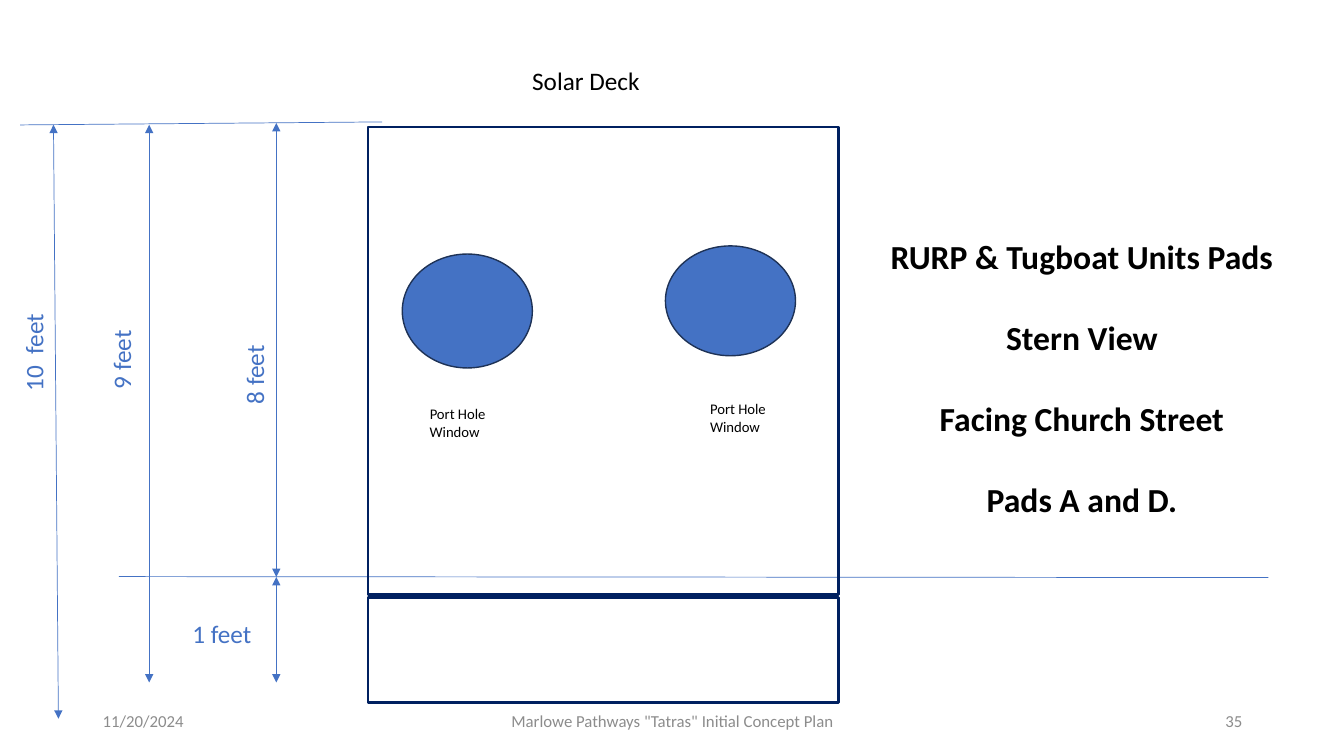
from lxml.etree import SubElement
from pptx import Presentation
from pptx.dml.color import RGBColor
from pptx.enum.shapes import MSO_CONNECTOR, MSO_SHAPE
from pptx.enum.text import MSO_ANCHOR, PP_ALIGN
from pptx.oxml.ns import qn
from pptx.util import Inches, Pt

WIDTH, HEIGHT = Inches(13.33), Inches(7.5)
BLUE, NAVY, EDGE, BLACK, GREY = "4472C4", "002060", "1E3256", "000000", "8C8C8C"
LEFT, CENTER, RIGHT = PP_ALIGN.LEFT, PP_ALIGN.CENTER, PP_ALIGN.RIGHT

ROOF, GROUND, BASE = 16.5, 76.33, 90.27
LABEL = (11.55, 5.33)
HULL_LEFT, HULL_WIDTH = 27.38, 35.03

GUIDES = [(8.85, 76.27, 94.37, 76.4), (1.5, 16.53, 28.43, 16.13)]
DIMENSIONS = [
    (20.56, GROUND, 20.56, 16.27),
    (11.1, BASE, 11.1, ROOF),
    (20.56, BASE, 20.56, GROUND),
    (4.35, 95.07, 3.98, ROOF),
]
HULL_PARTS = [(16.8, 61.87), (79.07, 13.87)]
PORT_HOLES = [(29.93, 33.6, 9.68, 15.07), (49.51, 32.53, 9.68, 14.53)]

LABEL_STYLE = {"size": Pt(18), "color": BLUE}
TITLE_STYLE = {"size": Pt(24), "color": BLACK, "bold": True}
CAPTION_STYLE = {"size": Pt(10.5), "color": BLACK}
FOOTER_STYLE = {"size": Pt(12), "color": GREY}

DIMENSION_LABELS = [
    ("8 feet", 13.13, 41.87, 270),
    ("9 feet", 3.23, 39.87, 270),
    ("10  feet", -3.3, 40.13, 270),
    ("1 feet", 13.58, 81.07, 0),
]
TITLE = ["RURP & Tugboat Units Pads", "Stern View", "Facing Church Street", "Pads A and D."]
CAPTION = ["Port Hole", "Window"]
CAPTION_PLACES = [(13.35, 52.93), (34.21, 52.27)]
FOOTERS = [
    ("11/20/2024", 6.9, 22.51, LEFT),
    ('Marlowe Pathways "Tatras" Initial Concept Plan', 33.16, 33.76, CENTER),
    ("35", 70.67, 22.51, RIGHT),
]


def color(value):
    return RGBColor.from_string(value)


def place(*shares):
    return [int(share * (HEIGHT if i % 2 else WIDTH) / 100) for i, share in enumerate(shares)]


def add_line(page, ends, arrows=False):
    line = page.shapes.add_connector(MSO_CONNECTOR.STRAIGHT, *place(*ends))
    line.line.color.rgb = color(BLUE)
    line.line.width = Pt(0.5)
    if arrows:
        for end in ("a:headEnd", "a:tailEnd"):
            SubElement(line.line._get_or_add_ln(), qn(end), type="triangle")
    SubElement(line._element.spPr, qn("a:effectLst"))


def add_outline(page, kind, area, edge, width, fill=None):
    shape = page.shapes.add_shape(kind, *place(*area))
    shape.shadow.inherit = False
    shape.line.color.rgb = color(edge)
    shape.line.width = Pt(width)
    if fill:
        shape.fill.solid()
        shape.fill.fore_color.rgb = color(fill)
    else:
        shape.fill.background()


def add_text(page, lines, area, style, align=LEFT, gap=0, turn=0, anchor=MSO_ANCHOR.TOP):
    box = page.shapes.add_textbox(*place(*area))
    box.rotation = turn
    frame = box.text_frame
    frame.word_wrap = True
    frame.vertical_anchor = anchor
    for i, line in enumerate(lines):
        para = frame.paragraphs[0] if i == 0 else frame.add_paragraph()
        para.alignment = align
        para.space_before = Pt(gap if i else 0)
        span = para.add_run()
        span.text = line
        for name, value in {"name": "Calibri", **style}.items():
            if name == "color":
                span.font.color.rgb = color(value)
            else:
                setattr(span.font, name, value)
    return frame


def main():
    deck = Presentation()
    deck.slide_width, deck.slide_height = WIDTH, HEIGHT
    page = deck.slides.add_slide(deck.slide_layouts[6])
    for ends in GUIDES:
        add_line(page, ends)
    for top, height in HULL_PARTS:
        area = (HULL_LEFT, top, HULL_WIDTH, height)
        add_outline(page, MSO_SHAPE.RECTANGLE, area, NAVY, 2)
    for ends in DIMENSIONS:
        add_line(page, ends, arrows=True)
    for area in PORT_HOLES:
        add_outline(page, MSO_SHAPE.FLOWCHART_CONNECTOR, area, EDGE, 1, BLUE)
    for label, left, top, turn in DIMENSION_LABELS:
        add_text(page, [label], (left, top, *LABEL), LABEL_STYLE, turn=turn)
    add_text(page, ["Solar Deck"], (38.86, 8, 14.63, 5.33), {**LABEL_STYLE, "color": BLACK})
    add_text(page, TITLE, (64.82, 30.53, 31.36, 39.07), TITLE_STYLE, CENTER, gap=29)
    for left, top in CAPTION_PLACES:
        frame = add_text(page, CAPTION, (left, top, 40.96, 6), CAPTION_STYLE, CENTER)
        frame.paragraphs[0]._p.get_or_add_pPr().set("marL", str(Inches(0.06)))
    for label, left, width, align in FOOTERS:
        area = (left, 92.67, width, 5.33)
        add_text(page, [label], area, FOOTER_STYLE, align, anchor=MSO_ANCHOR.MIDDLE)
    deck.save("out.pptx")


if __name__ == "__main__":
    main()
